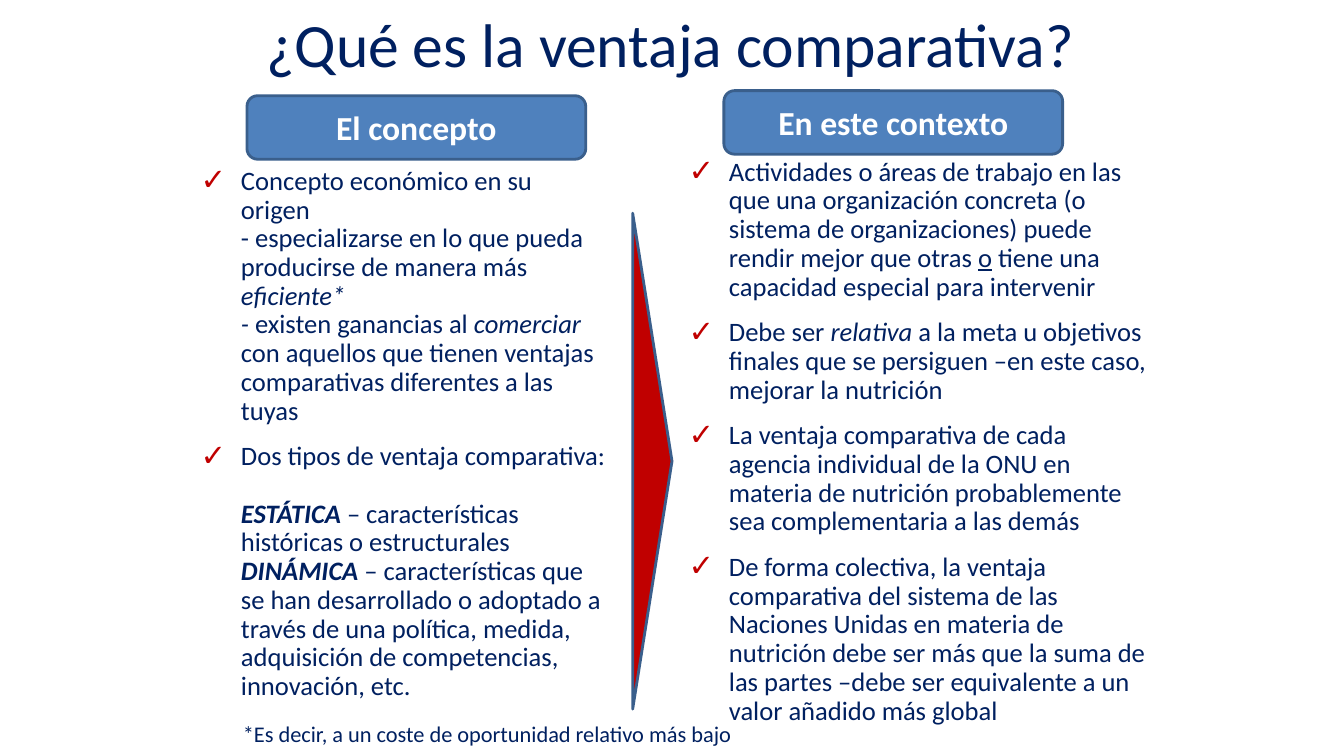
from lxml.etree import SubElement
from pptx import Presentation
from pptx.dml.color import RGBColor
from pptx.enum.shapes import MSO_SHAPE as SHAPE
from pptx.enum.text import MSO_ANCHOR as ANCHOR, MSO_AUTO_SIZE as AUTOSIZE, PP_ALIGN as ALIGN
from pptx.oxml.ns import qn
from pptx.util import Inches, Pt

NAVY, RED, BLUE, OUTLINE, WHITE = "002060", "C00000", "4F81BD", "3A5F8C", "FFFFFF"
BODY_SIZE = 19

# Each item is a list of (text, style) pairs; style letters: b, i, u.
CONCEPT = [
    [
        ("Concepto económico en su origen\n- especializarse en lo que pueda "
         "producirse de manera más ", ""),
        ("eficiente*\n- ", "i"),
        ("existen ganancias al ", ""),
        ("comerciar ", "i"),
        ("con aquellos que tienen ventajas comparativas diferentes a las tuyas", ""),
    ],
    [
        ("Dos tipos de ventaja comparativa: \n", ""),
        ("ESTÁTICA", "bi"),
        (" – características históricas o estructurales \n", ""),
        ("DINÁMICA ", "bi"),
        ("– características que se han desarrollado o adoptado a través de una "
         "política, medida, adquisición de competencias, innovación, etc.", ""),
    ],
]
CONTEXT = [
    [
        ("Actividades o áreas de trabajo en las que una organización concreta "
         "(o sistema de organizaciones) puede rendir mejor que otras ", ""),
        ("o", "u"),
        (" tiene una capacidad especial para intervenir", ""),
    ],
    [
        ("Debe ser ", ""),
        ("relativa", "i"),
        (" a la meta u objetivos finales que se persiguen –en este caso, "
         "mejorar la nutrición", ""),
    ],
    [("La ventaja comparativa de cada agencia individual de la ONU en materia de "
      "nutrición probablemente sea complementaria a las demás", "")],
    [("De forma colectiva, la ventaja comparativa del sistema de las Naciones Unidas "
      "en materia de nutrición debe ser más que la suma de las partes –debe ser "
      "equivalente a un valor añadido más global", "")],
]


def rgb(color):
    return RGBColor.from_string(color)


def place(item, left, top, width, height):
    item.left, item.top = Inches(left), Inches(top)
    item.width, item.height = Inches(width), Inches(height)


def style_font(font, size, color, style=""):
    font.name, font.size = "Calibri", Pt(size)
    font.color.rgb = rgb(color)
    font.bold, font.italic, font.underline = (letter in style for letter in "biu")


def style_line(paragraph, size, color, style="", align=None):
    paragraph.alignment = align
    for run in paragraph.runs:
        style_font(run.font, size, color, style)


def add_check_bullet(paragraph):
    props = paragraph._p.get_or_add_pPr()
    props.set("marL", str(Inches(0.4)))
    props.set("indent", str(Inches(-0.4)))
    SubElement(SubElement(props, qn("a:buClr")), qn("a:srgbClr"), val=RED)
    SubElement(props, qn("a:buSzPct"), val="115000")
    SubElement(props, qn("a:buChar"), char="✓")


def add_segment(paragraph, text, style):
    for number, part in enumerate(text.split("\n")):
        if number:
            paragraph.add_line_break()
            line_break = paragraph._p.findall(qn("a:br"))[-1]
            SubElement(line_break, qn("a:rPr"), sz=str(BODY_SIZE * 100))
        if part:
            run = paragraph.add_run()
            run.text = part
            style_font(run.font, BODY_SIZE, NAVY, style)


def fill_checklist(body, items, *box):
    place(body, *box)
    frame = body.text_frame
    frame.word_wrap = True
    frame.auto_size = AUTOSIZE.NONE
    for number, segments in enumerate(items):
        paragraph = frame.add_paragraph() if number else frame.paragraphs[0]
        add_check_bullet(paragraph)
        paragraph.line_spacing = 0.9
        paragraph.space_before = Pt(6 if number else 0)
        paragraph.space_after = Pt(6)
        for text, style in segments:
            add_segment(paragraph, text, style)


def add_outlined(slide, preset, fill, *box):
    shape = slide.shapes.add_shape(preset, *map(Inches, box))
    shape.shadow.inherit = False
    shape.fill.solid()
    shape.fill.fore_color.rgb = rgb(fill)
    shape.line.color.rgb = rgb(OUTLINE)
    shape.line.width = Pt(2)
    return shape


def add_heading(slide, text, left, top):
    heading = add_outlined(slide, SHAPE.ROUNDED_RECTANGLE, BLUE, left, top, 3.36, 0.63)
    frame = heading.text_frame
    frame.text = text
    frame.vertical_anchor = ANCHOR.MIDDLE
    style_line(frame.paragraphs[0], 24, WHITE, "b", ALIGN.CENTER)


def add_footnote(slide, text, *box):
    frame = slide.shapes.add_textbox(*map(Inches, box)).text_frame
    frame.word_wrap = False
    frame.auto_size = AUTOSIZE.SHAPE_TO_FIT_TEXT
    frame.text = text
    style_line(frame.paragraphs[0], 16, NAVY)


def set_title(title, text, *box):
    place(title, *box)
    frame = title.text_frame
    frame.text = text
    frame.vertical_anchor = ANCHOR.MIDDLE
    style_line(frame.paragraphs[0], 44, NAVY, align=ALIGN.CENTER)


def main():
    deck = Presentation()
    deck.slide_width, deck.slide_height = Inches(13.33), Inches(7.5)
    slide = deck.slides.add_slide(deck.slide_layouts.get_by_name("Two Content"))
    title, concept, context = list(slide.placeholders)[:3]

    set_title(title, "¿Qué es la ventaja comparativa?", 0.65, -0.2, 12, 1.25)
    fill_checklist(concept, CONCEPT, 1.89, 1.61, 4.22, 4.17)
    fill_checklist(context, CONTEXT, 6.73, 1.52, 4.77, 4.17)
    add_heading(slide, "El concepto", 2.45, 0.95)
    add_heading(slide, "En este contexto", 7.18, 0.9)
    divider = add_outlined(slide, SHAPE.ISOSCELES_TRIANGLE, RED, 4.01, 4.38, 4.92, 0.39)
    divider.rotation = 90
    add_footnote(slide, "*Es decir, a un coste de oportunidad relativo más bajo",
                 2.31, 7.1, 5.11, 0.37)
    deck.save("out.pptx")


if __name__ == "__main__":
    main()
